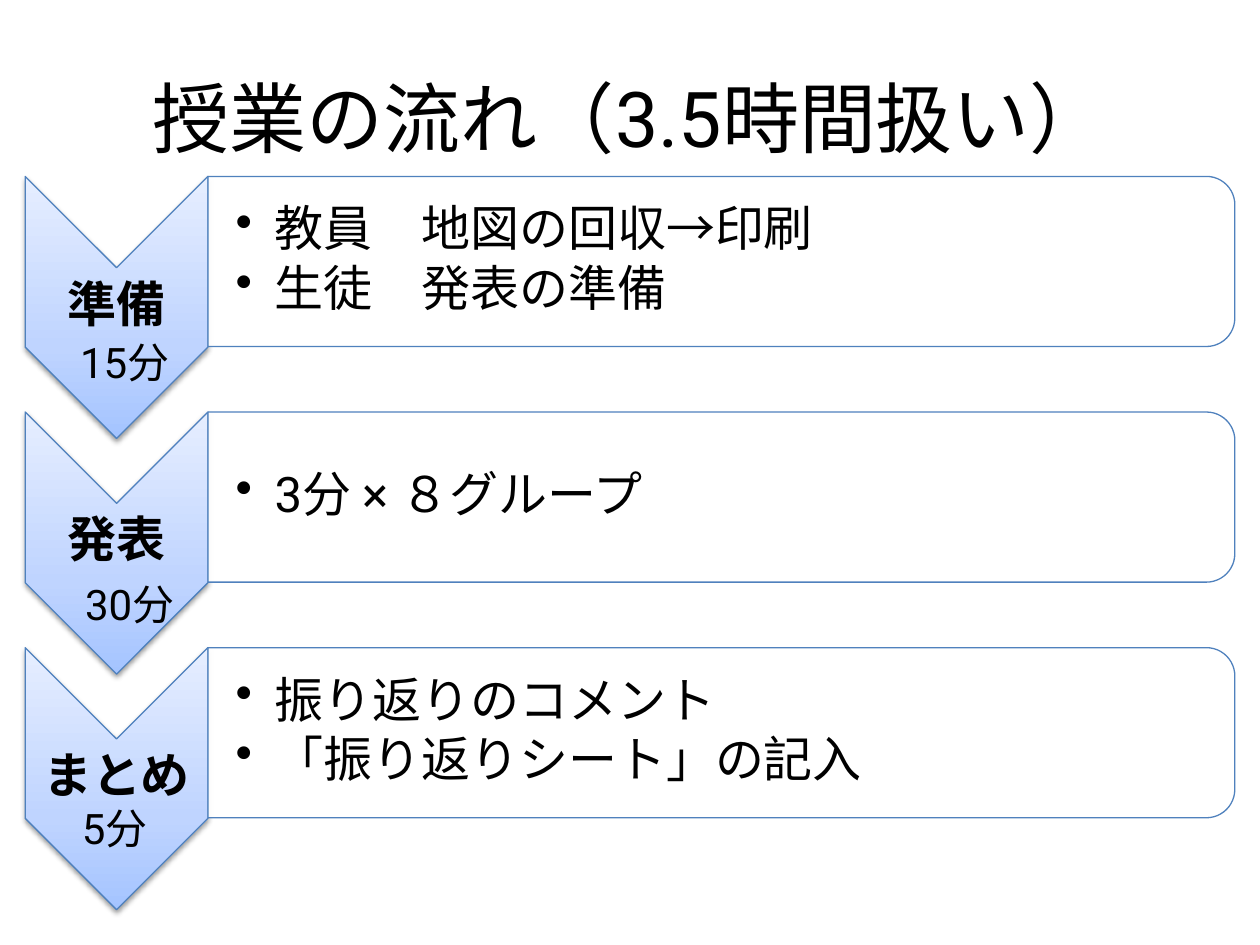
from lxml import etree
from pptx import Presentation
from pptx.dml.color import RGBColor
from pptx.enum.shapes import MSO_SHAPE
from pptx.enum.text import MSO_ANCHOR, PP_ALIGN
from pptx.oxml import parse_xml
from pptx.oxml.ns import nsdecls, qn
from pptx.util import Inches, Pt

CHEVRON, PANEL = MSO_SHAPE.CHEVRON, MSO_SHAPE.ROUND_2_SAME_RECTANGLE
MIDDLE, TOP = MSO_ANCHOR.MIDDLE, MSO_ANCHOR.TOP
CENTER, LEFT = PP_ALIGN.CENTER, PP_ALIGN.LEFT

# Content: stage, duration, left and vertical offset of the duration, bullets
TITLE = "授業の流れ（3.5時間扱い）"
STAGES = [
    ("準備", "15分", 0.28, 0.92, ["教員　地図の回収→印刷", "生徒　発表の準備"]),
    ("発表", "30分", 0.32, 0.97, ["3分 × ８グループ"]),
    ("まとめ", "5分", 0.20, 0.88, ["振り返りのコメント", "「振り返りシート」の記入"]),
]
FONT, BLACK, WHITE, BLUE = "Roboto", "000000", "FFFFFF", "4F81BD"
GRADIENT = [(0, "A4C4FF"), (35, "BFD4FF"), (100, "E6EEFF")]

# Layout in inches: one row per stage, arrow column then panel column
ROW_TOP, ROW_STEP = 1.40, 1.87
ARROW_X, ARROW_W, ARROW_H = 0.20, 1.45, 2.08
PANEL_X, PANEL_W, PANEL_H = 1.65, 8.15, 1.35
INSET = 0.02


def color(value):
    return RGBColor.from_string(value)


def add_run(p, text, size, bold=False):
    r = p.add_run()
    r.text = text
    r.font.size, r.font.bold, r.font.name = Pt(size), bold, FONT
    r.font.color.rgb = color(BLACK)


def add_text(s, box, lines, size, bold=False, align=CENTER, anchor=MIDDLE,
             insets=(INSET,) * 4, line_spacing=0.9, after=0, bullet=False):
    tf = s.shapes.add_textbox(*map(Inches, box)).text_frame
    tf.word_wrap, tf.vertical_anchor = True, anchor
    (tf.margin_left, tf.margin_top,
     tf.margin_right, tf.margin_bottom) = map(Inches, insets)
    for i, line in enumerate(lines):
        p = tf.add_paragraph() if i else tf.paragraphs[0]
        p.alignment, p.line_spacing, p.space_after = align, line_spacing, Pt(after)
        if bullet:
            p.level = 1
            pPr = p._p.get_or_add_pPr()
            pPr.set("marL", str(Inches(0.31)))
            pPr.set("indent", str(-Inches(0.31)))
            etree.SubElement(pPr, qn("a:buChar")).set("char", "•")
        add_run(p, line, size, bold)


def add_turned(s, kind, x, y, w, h):
    """Add a shape turned by 90 degrees that shows in the box x, y, w, h."""
    sp = s.shapes.add_shape(kind, Inches(x + (w - h) / 2), Inches(y + (h - w) / 2),
                            Inches(h), Inches(w))
    sp.rotation = 90
    sp.shadow.inherit = False
    sp.line.color.rgb, sp.line.width = color(BLUE), Pt(0.75)
    return sp


def add_arrow(s, y):
    sp = add_turned(s, CHEVRON, ARROW_X, y, ARROW_W, ARROW_H)
    spPr = sp._element.spPr
    stops = "".join(f'<a:gs pos="{pos * 1000}"><a:srgbClr val="{c}"/></a:gs>'
                    for pos, c in GRADIENT)
    spPr.find(qn("a:solidFill")).getparent() if spPr.find(qn("a:solidFill")) is not None else None
    spPr.find(qn("a:prstGeom")).addnext(parse_xml(
        f'<a:gradFill {nsdecls("a")} rotWithShape="0"><a:gsLst>{stops}</a:gsLst>'
        '<a:lin ang="16200000" scaled="0"/></a:gradFill>'))
    spPr.find(qn("a:effectLst")).append(parse_xml(
        f'<a:outerShdw {nsdecls("a")} blurRad="{Pt(3.1)}" dist="{Pt(1.6)}" dir="5400000" '
        f'rotWithShape="0"><a:srgbClr val="{BLACK}"><a:alpha val="38000"/>'
        '</a:srgbClr></a:outerShdw>'))


def add_panel(s, y):
    sp = add_turned(s, PANEL, PANEL_X, y, PANEL_W, PANEL_H)
    sp.fill.solid()
    sp.fill.fore_color.rgb = color(WHITE)
    rgb = sp._element.spPr.find(qn("a:solidFill")).find(qn("a:srgbClr"))
    etree.SubElement(rgb, qn("a:alpha")).set("val", "90000")


def main():
    prs = Presentation()
    prs.slide_width, prs.slide_height = Inches(10), Inches(7.5)
    s = prs.slides.add_slide(prs.slide_layouts[5])

    # Title
    title = s.shapes.title
    title.left, title.top, title.width, title.height = map(Inches, (0.5, 0.3, 9, 1.25))
    title.text_frame.vertical_anchor = MIDDLE
    p = title.text_frame.paragraphs[0]
    p.alignment = CENTER
    add_run(p, TITLE, 44)

    # Stages: arrow with its name, panel with its bullets
    for i, (name, _, _, _, bullets) in enumerate(STAGES):
        y = ROW_TOP + i * ROW_STEP
        add_arrow(s, y)
        add_text(s, (ARROW_X, y + 0.72, ARROW_W, 0.62), [name], 28, bold=True, after=10)
        add_panel(s, y)
        add_text(s, (PANEL_X, y + 0.06, 8.09, 1.22), bullets, 28, align=LEFT,
                 insets=(0.22, INSET, INSET, INSET), after=4, bullet=True)

    # Durations
    for i, (_, minutes, x, dy, _) in enumerate(STAGES):
        y = ROW_TOP + i * ROW_STEP + 0.3 + dy
        add_text(s, (x, y, 1.42, 0.5), [minutes], 24, anchor=TOP,
                 insets=(0.1, 0.05, 0.1, 0.05), line_spacing=1.0)

    prs.save("out.pptx")


if __name__ == "__main__":
    main()
